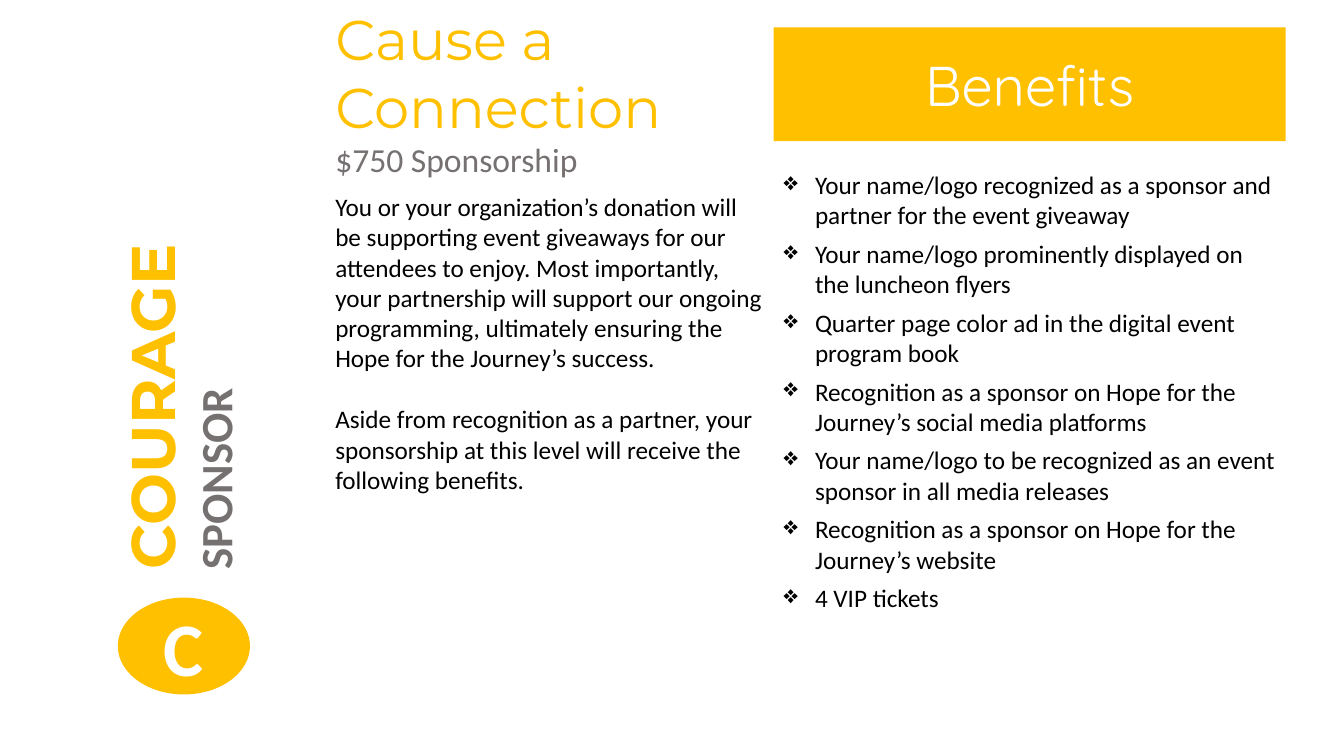
from lxml.etree import SubElement
from pptx import Presentation
from pptx.dml.color import RGBColor
from pptx.enum.shapes import MSO_SHAPE
from pptx.enum.text import MSO_ANCHOR, PP_ALIGN
from pptx.oxml.ns import qn
from pptx.util import Cm, Pt

COLORS = {"gold": "FFC000", "gray": "767171", "white": "FFFFFF", "black": "000000"}

deck = Presentation()
deck.slide_width, deck.slide_height = Cm(33.87), Cm(19.05)
slide = deck.slides.add_slide(deck.slide_layouts[6])


def add_box(left, top, width, height, kind=None):
    """Add a text box, or a gold shape with centred text."""
    place = [Cm(n) for n in (left, top, width, height)]
    if kind is None:
        box = slide.shapes.add_textbox(*place)
    else:
        box = slide.shapes.add_shape(kind, *place)
        box.shadow.inherit = False
        box.fill.solid()
        box.fill.fore_color.rgb = RGBColor.from_string(COLORS["gold"])
        box.line.fill.background()
        box.text_frame.vertical_anchor = MSO_ANCHOR.MIDDLE
        box.text_frame.paragraphs[0].alignment = PP_ALIGN.CENTER
    box.text_frame.word_wrap = True
    return box.text_frame


def add_line(frame, text, size, color, face="Calibri", bold=False, mark=None):
    """Write one paragraph, with a bullet if a mark is given."""
    line = frame.paragraphs[0]
    if line.runs:
        line = frame.add_paragraph()
    line.add_run().text = text
    if mark:
        props = line._p.get_or_add_pPr()
        props.set("marL", str(Cm(0.79)))
        props.set("indent", str(Cm(-0.79)))
        SubElement(props, qn("a:buChar")).set("char", mark)
        line.space_after = Pt(6)
    line.font.size = Pt(size)
    line.font.name = face
    line.font.bold = bold
    line.font.color.rgb = RGBColor.from_string(COLORS[color])
    return line


# Sponsor level, turned to read upwards
level = add_box(2.74, 1.78, 3.76, 12.83)
level._txBody.bodyPr.set("vert", "vert270")
add_line(level, "COURAGE", 44, "gold", "Montserrat", True)
add_line(level, "SPONSOR", 32, "gray", bold=True)

# Badge
badge = add_box(2.97, 15.06, 3.33, 2.44, MSO_SHAPE.OVAL)
add_line(badge, "C", 54, "white", bold=True)

# Title and price
title = add_box(8.2, 0, 11.3, 4.7)
add_line(title, "Cause a Connection", 40, "gold", "Montserrat")
add_line(title, "$750 Sponsorship", 24, "gray")

# Description
about = add_box(8.2, 4.7, 11.3, 7.95)
add_line(about, "You or your organization’s donation will be supporting event giveaways "
         "for our attendees to enjoy. Most importantly, your partnership will support "
         "our ongoing programming, ultimately ensuring the Hope for the Journey’s "
         "success.", 18, "black")
close = add_line(about, "Aside from recognition as a partner, your sponsorship at this "
                 "level will receive the following benefits.", 18, "black")
close.space_before = Pt(22)

# Benefits
head = add_box(19.5, 0.69, 12.9, 2.87, MSO_SHAPE.RECTANGLE)
add_line(head, "Benefits", 40, "white", "Quicksand")

perks = add_box(19.5, 4.14, 12.9, 11.53)
for perk in (
    "Your name/logo recognized as a sponsor and partner for the event giveaway",
    "Your name/logo prominently displayed on the luncheon flyers",
    "Quarter page color ad in the digital event program book",
    "Recognition as a sponsor on Hope for the Journey’s social media platforms",
    "Your name/logo to be recognized as an event sponsor in all media releases",
    "Recognition as a sponsor on Hope for the Journey’s website",
    "4 VIP tickets",
):
    add_line(perks, perk, 18, "black", mark="❖")

deck.save("out.pptx")
